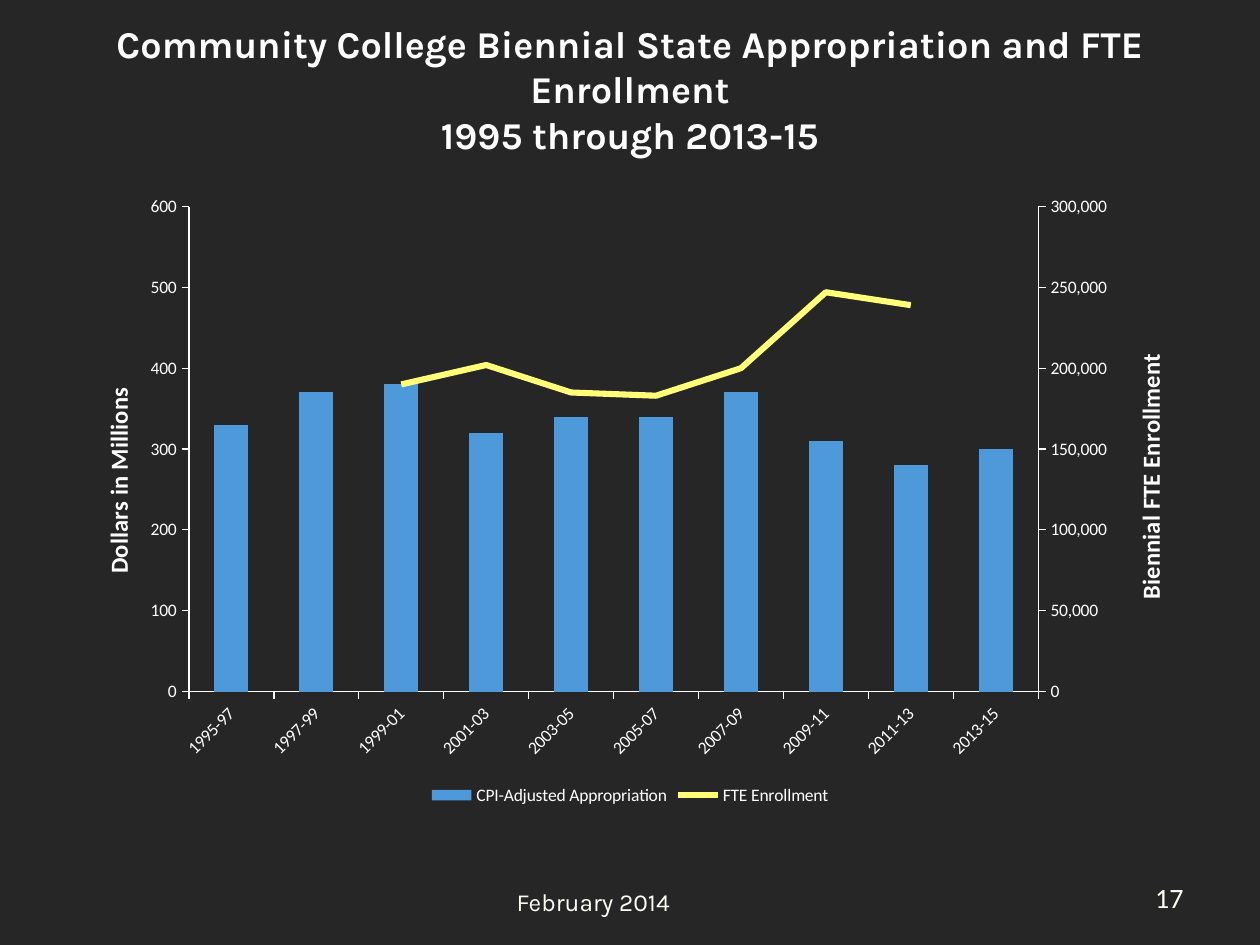
from copy import deepcopy

from pptx import Presentation
from pptx.chart.axis import CategoryAxis, ValueAxis
from pptx.chart.data import CategoryChartData
from pptx.dml.color import RGBColor
from pptx.enum.chart import XL_CHART_TYPE as ChartType
from pptx.enum.chart import XL_LEGEND_POSITION as LegendPosition
from pptx.enum.chart import XL_MARKER_STYLE as MarkerStyle
from pptx.enum.chart import XL_TICK_MARK as TickMark
from pptx.enum.text import MSO_ANCHOR as Anchor
from pptx.enum.text import PP_ALIGN as Align
from pptx.oxml import parse_xml
from pptx.oxml.ns import nsdecls, qn
from pptx.util import Inches, Pt

BACKGROUND = RGBColor(0x26, 0x26, 0x26)
WHITE = RGBColor(0xFF, 0xFF, 0xFF)
IVORY = RGBColor(0xFF, 0xFF, 0xF5)
BLUE = RGBColor(0x4D, 0x99, 0xDA)
YELLOW = RGBColor(0xFF, 0xFF, 0x78)

BIENNIA = ["1995-97", "1997-99", "1999-01", "2001-03", "2003-05",
           "2005-07", "2007-09", "2009-11", "2011-13", "2013-15"]
APPROPRIATION = [330, 370, 380, 320, 340, 340, 370, 310, 280, 300]
ENROLLMENT = [None, None, 190000, 202000, 185000,
              183000, 200000, 247000, 239000, None]


def add_text(slide, box, text, font_name, size, color,
             bold=False, align=Align.LEFT, anchor=Anchor.TOP, indent=Inches(0.1)):
    frame = slide.shapes.add_textbox(*box).text_frame
    frame.word_wrap = True
    frame.vertical_anchor = anchor
    frame.margin_left = indent
    frame.text = text
    paragraph = frame.paragraphs[0]
    paragraph.alignment = align
    for run in paragraph.runs:
        run.font.name = font_name
        run.font.size = Pt(size)
        run.font.bold = bold
        run.font.color.rgb = color


def make_layout(box, target="", **lengths):
    width, height = box[2:]
    modes = "".join(f'<c:{key}Mode val="edge"/>' for key in "xy")
    values = "".join(f'<c:{key} val="{length / (width if key in "xw" else height):.4f}"/>'
                     for key, length in lengths.items())
    return parse_xml(f'<c:layout {nsdecls("c")}><c:manualLayout>{target}{modes}{values}'
                     '</c:manualLayout></c:layout>')


def drop(parent, tag):
    for child in parent.findall(qn(tag)):
        parent.remove(child)


def style_axis(axis):
    axis.has_major_gridlines = False
    axis.major_tick_mark = TickMark.OUTSIDE
    axis.minor_tick_mark = TickMark.NONE
    axis.format.line.color.rgb = WHITE
    axis.format.line.width = Pt(0.75)
    axis.tick_labels.font.size = Pt(10)
    axis.tick_labels.font.color.rgb = WHITE


def style_value_axis(axis_xml, title, maximum, unit, number_format, layout):
    axis = ValueAxis(axis_xml)
    style_axis(axis)
    axis.minimum_scale = 0
    axis.maximum_scale = maximum
    axis.major_unit = unit
    axis.tick_labels.number_format = number_format
    axis.tick_labels.number_format_is_linked = False
    axis.has_title = True
    frame = axis.axis_title.text_frame
    frame.text = title
    font = frame.paragraphs[0].runs[0].font
    font.size = Pt(14)
    font.bold = True
    font.color.rgb = WHITE
    title_xml = axis_xml.find(qn("c:title"))
    body = title_xml.find(".//" + qn("a:bodyPr"))
    body.set("rot", "-5400000")
    body.set("vert", "horz")
    drop(title_xml, "c:layout")
    title_xml.find(qn("c:tx")).addnext(layout)


def move_to_right_axis(plot_area):
    columns = plot_area.find(qn("c:barChart"))
    enrollment = columns.findall(qn("c:ser"))[1]
    drop(enrollment, "c:invertIfNegative")
    line_plot = parse_xml(
        f'<c:lineChart {nsdecls("c")}><c:grouping val="standard"/><c:varyColors val="0"/>'
        '<c:marker val="1"/><c:axId val="501"/><c:axId val="502"/></c:lineChart>')
    line_plot.insert(2, enrollment)
    columns.addnext(line_plot)

    left_axis = plot_area.find(qn("c:valAx"))
    biennium_axis = deepcopy(plot_area.find(qn("c:catAx")))
    right_axis = deepcopy(left_axis)
    left_axis.addnext(right_axis)
    right_axis.addnext(biennium_axis)
    for axis, own, other in ((biennium_axis, "501", "502"), (right_axis, "502", "501")):
        axis.find(qn("c:axId")).set("val", own)
        axis.find(qn("c:crossAx")).set("val", other)
    CategoryAxis(biennium_axis).visible = False
    right_axis.find(qn("c:axPos")).set("val", "r")
    right_axis.find(qn("c:crosses")).set("val", "max")
    return left_axis, right_axis


def add_enrollment_chart(slide, box):
    data = CategoryChartData()
    data.categories = BIENNIA
    data.add_series("CPI-Adjusted Appropriation", APPROPRIATION, "0")
    data.add_series("FTE Enrollment", ENROLLMENT, "#,##0")
    chart = slide.shapes.add_chart(ChartType.COLUMN_CLUSTERED, *box, data).chart
    chart.has_title = False
    chart.font.name = "Calibri"
    chart.font.size = Pt(10)
    chart.has_legend = True
    chart.legend.position = LegendPosition.BOTTOM
    chart.legend.include_in_layout = False
    chart.legend.font.size = Pt(10)
    chart.legend.font.color.rgb = WHITE

    plot_area = chart.element.find(".//" + qn("c:plotArea"))
    left_axis, right_axis = move_to_right_axis(plot_area)
    drop(plot_area, "c:layout")
    plot_area.insert(0, make_layout(box, '<c:layoutTarget val="inner"/>',
                                    x=Inches(1), y=Inches(0.18),
                                    w=Inches(6.74), h=Inches(3.85)))
    style_axis(chart.category_axis)
    labels = plot_area.find(qn("c:catAx")).find(qn("c:txPr"))
    labels.find(qn("a:bodyPr")).set("rot", "-2700000")
    style_value_axis(left_axis, "Dollars in Millions", 600, 100, "0",
                     make_layout(box, x=Inches(0.27), y=Inches(1.58)))
    style_value_axis(right_axis, "Biennial FTE Enrollment", 300000, 50000, "#,##0",
                     make_layout(box, x=Inches(8.46), y=Inches(1.31)))

    columns, line_plot = chart.plots
    columns.gap_width = 150
    columns.vary_by_categories = False
    appropriation = columns.series[0]
    appropriation.format.fill.solid()
    appropriation.format.fill.fore_color.rgb = BLUE
    enrollment = line_plot.series[0]
    enrollment.smooth = False
    enrollment.marker.style = MarkerStyle.NONE
    enrollment.format.line.color.rgb = YELLOW
    enrollment.format.line.width = Pt(3.5)


def add_footer(slide, left, top, width):
    add_text(slide, (left, top + Inches(0.05), width, Inches(0.34)),
             "February 2014", "Karla", 14, IVORY, indent=Inches(3.6))
    add_text(slide, (left + width, top, Inches(0.7), Inches(0.37)),
             "17", "Calibri", 16, IVORY)


def main():
    deck = Presentation()
    deck.slide_width, deck.slide_height = Inches(10), Inches(7.5)
    slide = deck.slides.add_slide(deck.slide_layouts[6])
    slide.background.fill.solid()
    slide.background.fill.fore_color.rgb = BACKGROUND
    left, width = Inches(0.5), Inches(9)
    add_footer(slide, left, Inches(6.94), Inches(8.57))
    add_text(slide, (left, Inches(0.21), width, Inches(0.99)),
             "Community College Biennial State Appropriation and FTE Enrollment\v"
             "1995 through 2013-15",
             "Karla", 21.6, WHITE, bold=True, align=Align.CENTER, anchor=Anchor.MIDDLE)
    add_enrollment_chart(slide, (left, Inches(1.46), width, Inches(4.97)))
    deck.save("out.pptx")


if __name__ == "__main__":
    main()
